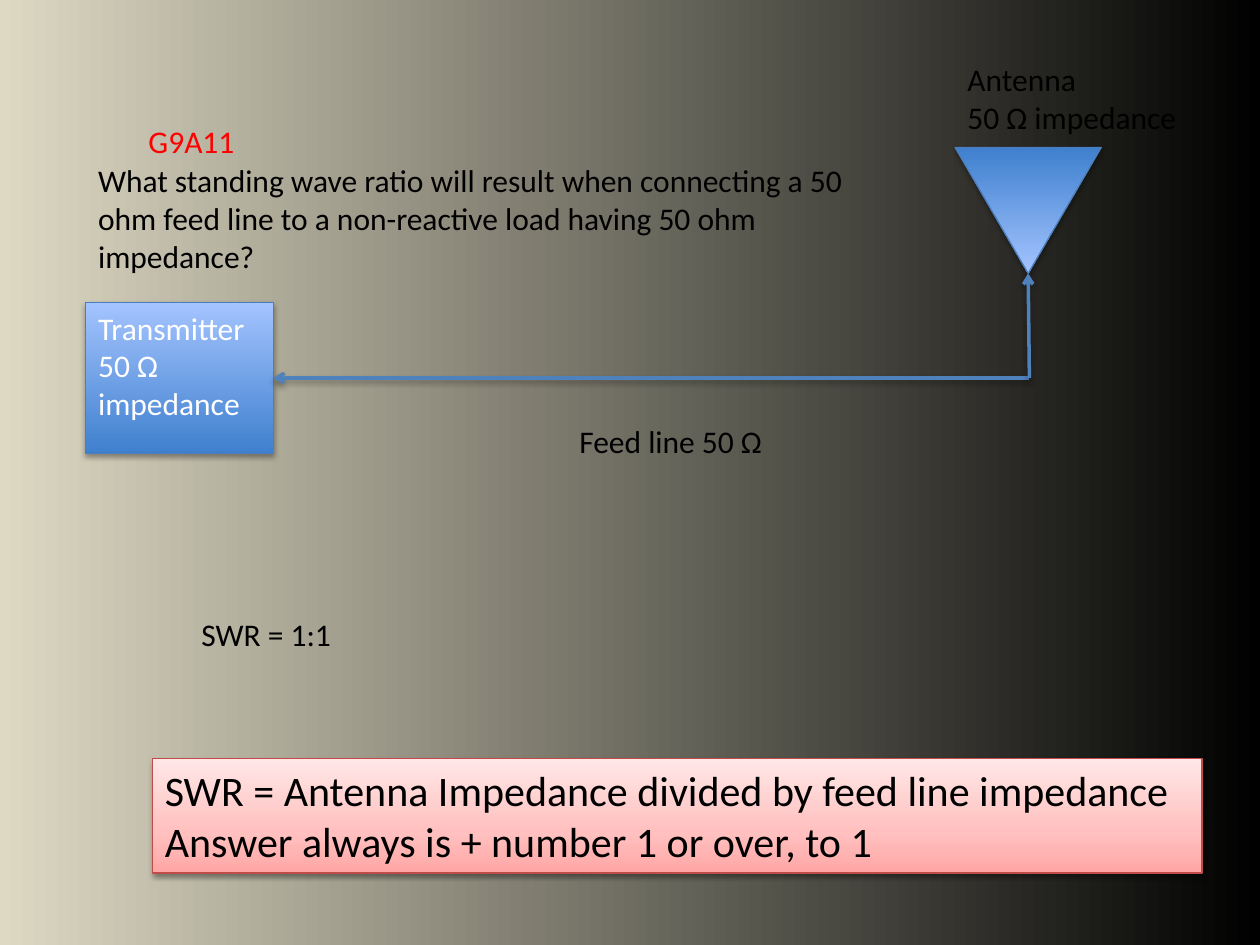
"""Build a slide on the standing wave ratio of a matched feed line."""
from lxml import etree
from pptx import Presentation
from pptx import util as u
from pptx.dml.color import RGBColor
from pptx.enum import shapes, text
from pptx.oxml import ns, parse_xml


class Theme:
    font = "Calibri"
    body, large = 18, 24
    black, white, red = "000000", "FFFFFF", "FF0000"
    wire, edge, rim = "4F81BD", "4B7EBC", "BF4C48"
    back = [(0, "DDD9C3", 76), (100, "000000", 12)]
    blue = [(0, "3F80CE", 100), (100, "A4C4FF", 100)]
    pink = [(0, "FFA6A5", 100), (35, "FFC0BF", 100), (100, "FFE7E7", 100)]


def grade(fill, props, stops, angle):
    fill.solid()
    marks = "".join(
        f'<a:gs pos="{pos * 1000}"><a:srgbClr val="{color}">'
        f'<a:alpha val="{alpha * 1000}"/></a:srgbClr></a:gs>'
        for pos, color, alpha in stops)
    grad = parse_xml(
        f'<a:gradFill {ns.nsdecls("a")} rotWithShape="1"><a:gsLst>{marks}</a:gsLst>'
        f'<a:lin ang="{angle * 60000}" scaled="0"/></a:gradFill>')
    props.replace(props.find(ns.qn("a:solidFill")), grad)


def write(frame, lines, size, color):
    for i, line in enumerate(lines):
        para = frame.add_paragraph() if i else frame.paragraphs[0]
        para.alignment = text.PP_ALIGN.LEFT
        run = para.add_run()
        run.text = line
        run.font.name = Theme.font
        run.font.size = u.Pt(size)
        run.font.color.rgb = RGBColor.from_string(color)


deck = Presentation()
deck.slide_width, deck.slide_height = u.Inches(10), u.Inches(7.5)
slide = deck.slides.add_slide(deck.slide_layouts[6])
ground = slide.background.fill
ground.solid()
grade(ground, slide.element.find(".//" + ns.qn("p:bgPr")), Theme.back, 0)

kind = shapes.MSO_SHAPE
blocks = [
    (kind.RECTANGLE, (0.68, 2.4, 1.49, 1.2), Theme.blue, Theme.edge, 0,
     ["Transmitter", "50 Ω impedance"], Theme.body, Theme.white),
    (kind.ISOSCELES_TRIANGLE, (7.58, 1.17, 1.16, 1), Theme.blue, Theme.edge, 180,
     [], Theme.body, Theme.white),
    (kind.RECTANGLE, (1.21, 6.02, 8.33, 0.91), Theme.pink, Theme.rim, 0,
     ["SWR = Antenna Impedance divided by feed line impedance",
      "Answer always is + number 1 or over, to 1"], Theme.large, Theme.black),
]
drawn = []
for form, place, stops, edge, turn, lines, size, color in blocks:
    block = slide.shapes.add_shape(form, *map(u.Inches, place))
    block.rotation = turn
    grade(block.fill, block.element.spPr, stops, 270)
    block.line.color.rgb = RGBColor.from_string(edge)
    block.line.width = u.Pt(0.75)
    block.text_frame.word_wrap = True
    block.text_frame.vertical_anchor = text.MSO_ANCHOR.TOP
    write(block.text_frame, lines, size, color)
    drawn.append(block)

labels = [
    ((7.58, 0.43, 1.88, 0.71), ["Antenna", "50 Ω impedance"], Theme.black, False),
    ((4.5, 3.3, 1.67, 0.4), ["Feed line 50 Ω"], Theme.black, False),
    ((1.5, 4.83, 1.24, 0.4), ["SWR = 1:1"], Theme.black, False),
    ((1.08, 0.92, 0.89, 0.4), ["G9A11"], Theme.red, False),
    ((0.68, 1.23, 6.41, 1.31),
     ["What standing wave ratio will result when connecting a 50 ohm feed line "
      "to a non-reactive load having 50 ohm impedance?"], Theme.black, True),
]
for place, lines, color, wrap in labels:
    frame = slide.shapes.add_textbox(*map(u.Inches, place)).text_frame
    frame.word_wrap = wrap
    frame.auto_size = text.MSO_AUTO_SIZE.SHAPE_TO_FIT_TEXT
    write(frame, lines, Theme.body, color)

wires = []
for end in [(2.17, 3), (8.16, 2.17)]:
    wire = slide.shapes.add_connector(
        shapes.MSO_CONNECTOR.STRAIGHT, *map(u.Inches, (8.17, 3, *end)))
    wire.line.color.rgb = RGBColor.from_string(Theme.wire)
    wire.line.width = u.Pt(2)
    etree.SubElement(wire.line._get_or_add_ln(), ns.qn("a:tailEnd"), type="arrow")
    wires.append(wire)
wires[0].end_connect(drawn[0], 3)

shades = [(drawn[0], 35, 1.8), (drawn[1], 35, 1.8), (drawn[2], 38, 1.6)]
shades += [(wire, 38, 1.6) for wire in wires]
for item, alpha, gap in shades:
    item.element.spPr.append(parse_xml(
        f'<a:effectLst {ns.nsdecls("a")}><a:outerShdw blurRad="{u.Pt(3.1)}" '
        f'dist="{u.Pt(gap)}" dir="5400000" rotWithShape="0">'
        f'<a:srgbClr val="{Theme.black}"><a:alpha val="{alpha * 1000}"/></a:srgbClr>'
        f'</a:outerShdw></a:effectLst>'))

deck.save("out.pptx")
